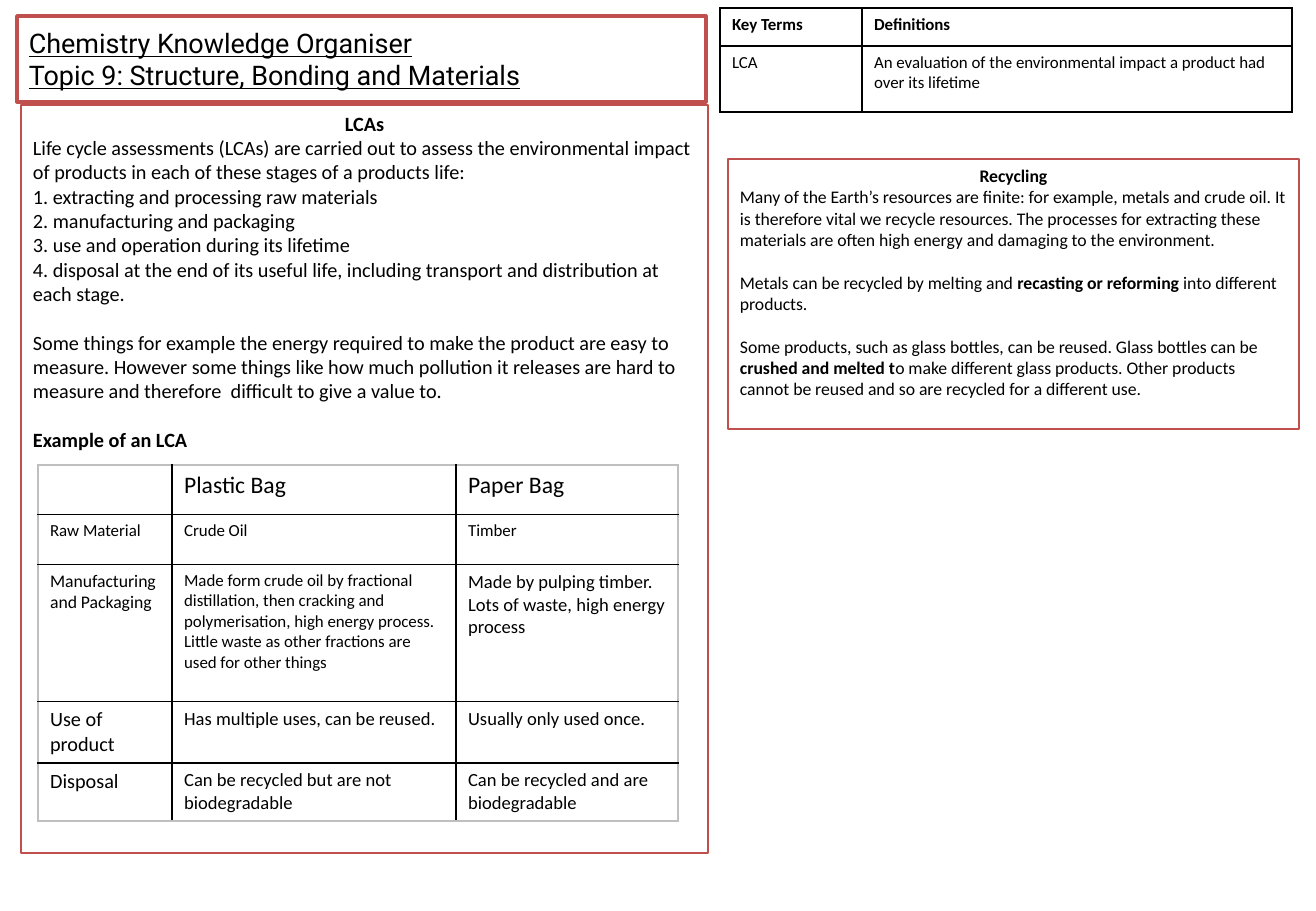
from lxml import etree
from pptx import Presentation
from pptx import util as u
from pptx.dml.color import RGBColor
from pptx.enum import shapes, text
from pptx.oxml.ns import qn

PX = 7526  # EMU in one px
COLORS = {"ink": "000000", "paper": "FFFFFF", "frame": "C0504D", "edge": "BFBFBF"}
NO_TABLE_STYLE = "{2D5ABB26-0587-4C30-8999-92F81FD0307C}"


def rgb(name):
    return RGBColor.from_string(COLORS[name])


def write(p, content, size=12, font="Calibri", bold=False, underline=None,
          align=text.PP_ALIGN.LEFT, before=0):
    """Fill a paragraph; ** switches bold on and off."""
    p.alignment = align
    p.space_before = u.Pt(before)
    for i, part in enumerate(content.split("**")):
        if part:
            r = p.add_run()
            r.text = part
            f = r.font
            f.size, f.name = u.Pt(size), font
            f.bold, f.underline = bold != (i % 2 == 1), underline
            f.color.rgb = rgb("ink")


class Organiser:
    def __init__(self, width, height):
        self.prs = Presentation()
        self.prs.slide_width, self.prs.slide_height = width * PX, height * PX
        self.slide = self.prs.slides.add_slide(self.prs.slide_layouts[6])

    def panel(self, box, paragraphs, line=1.5, fill=None,
              anchor=text.MSO_ANCHOR.TOP, **style):
        """Framed box; each paragraph is (text, format)."""
        sp = self.slide.shapes.add_shape(
            shapes.MSO_SHAPE.RECTANGLE, *(v * PX for v in box))
        sp.shadow.inherit = False
        if fill:
            sp.fill.solid()
            sp.fill.fore_color.rgb = rgb(fill)
        else:
            sp.fill.background()
        sp.line.color.rgb, sp.line.width = rgb("frame"), u.Pt(line)
        tf = sp.text_frame
        tf.word_wrap, tf.vertical_anchor = True, anchor
        for i, (content, extra) in enumerate(paragraphs):
            p = tf.add_paragraph() if i else tf.paragraphs[0]
            write(p, content, **{**style, **extra})

    def border(self, cell, side, color):
        ln = etree.SubElement(cell._tc.get_or_add_tcPr(), qn("a:ln" + side), w="12700")
        fill = etree.SubElement(ln, qn("a:solidFill"))
        etree.SubElement(fill, qn("a:srgbClr"), val=COLORS[color])

    def table(self, left, top, widths, heights, rows, edge="ink", bold_head=False):
        """Ruled grid; each cell is (text, size)."""
        tbl = self.slide.shapes.add_table(
            len(heights), len(widths), left * PX, top * PX,
            sum(widths) * PX, sum(heights) * PX).table
        tbl.first_row = tbl.horz_banding = False
        tbl._tbl.tblPr.find(qn("a:tableStyleId")).text = NO_TABLE_STYLE
        for col, width in zip(tbl.columns, widths):
            col.width = width * PX
        for row, height in zip(tbl.rows, heights):
            row.height = height * PX
        for y, row in enumerate(rows):
            for x, (content, size) in enumerate(row):
                cell = tbl.cell(y, x)
                outer = {"L": x == 0, "R": x == len(widths) - 1,
                         "T": y == 0, "B": y == len(heights) - 1}
                for side, is_outer in outer.items():
                    self.border(cell, side, edge if is_outer else "ink")
                cell.fill.background()
                write(cell.text_frame.paragraphs[0], content, size=size,
                      bold=bold_head and y == 0)


def main():
    page = Organiser(1316, 911)
    heading = {"bold": True, "align": text.PP_ALIGN.CENTER}

    # Title
    page.panel((17, 16, 689, 86), [
        ("Chemistry Knowledge Organiser", {}),
        ("Topic 9: Structure, Bonding and Materials", {}),
    ], line=2, fill="paper", anchor=text.MSO_ANCHOR.MIDDLE,
        size=16, font="Roboto", underline=True)

    # Key terms
    page.table(720, 8, [142, 430], [38, 66], [
        [("Key Terms", 10), ("Definitions", 10)],
        [("LCA", 10), ("An evaluation of the environmental impact a product had "
                       "over its lifetime", 10)],
    ], bold_head=True)

    # Life cycle assessments
    gap = {"before": 14.6}
    page.panel((21, 105, 687, 748), [
        ("LCAs", heading),
        ("Life cycle assessments (LCAs) are carried out to assess the environmental "
         "impact of products in each of these stages of a products life:", {}),
        ("1. extracting and processing raw materials", {}),
        ("2. manufacturing and packaging", {}),
        ("3. use and operation during its lifetime", {}),
        ("4. disposal at the end of its useful life, including transport and "
         "distribution at each stage.", {}),
        ("Some things for example the energy required to make the product are easy to "
         "measure. However some things like how much pollution it releases are hard to "
         "measure and therefore  difficult to give a value to.", gap),
        ("Example of an LCA", {"bold": True, **gap}),
    ], size=12)

    # Recycling
    gap = {"before": 12.8}
    page.panel((728, 159, 571, 270), [
        ("Recycling", heading),
        ("Many of the Earth’s resources are finite: for example, metals and crude oil. "
         "It is therefore vital we recycle resources. The processes for extracting "
         "these materials are often high energy and damaging to the environment.", {}),
        ("Metals can be recycled by melting and **recasting or reforming **into "
         "different products.", gap),
        ("Some products, such as glass bottles, can be reused. Glass bottles can be "
         "**crushed and melted t**o make different glass products. Other products "
         "cannot be reused and so are recycled for a different use.", gap),
    ], size=10.5)

    # Example LCA
    page.table(38, 465, [134, 284, 222], [49, 50, 137, 61, 57], [
        [("", 14), ("Plastic Bag", 14), ("Paper Bag", 14)],
        [("Raw Material", 10), ("Crude Oil", 10), ("Timber", 10)],
        [("Manufacturing and Packaging", 10.5),
         ("Made form crude oil by fractional distillation, then cracking and "
          "polymerisation, high energy process. Little waste as other fractions are "
          "used for other things", 10),
         ("Made by pulping timber. Lots of waste, high energy process", 11)],
        [("Use of product", 12), ("Has multiple uses, can be reused.", 11),
         ("Usually only used once.", 11)],
        [("Disposal", 12), ("Can be recycled but are not biodegradable", 11),
         ("Can be recycled and are biodegradable", 11)],
    ], edge="edge")

    page.prs.save("out.pptx")


if __name__ == "__main__":
    main()
